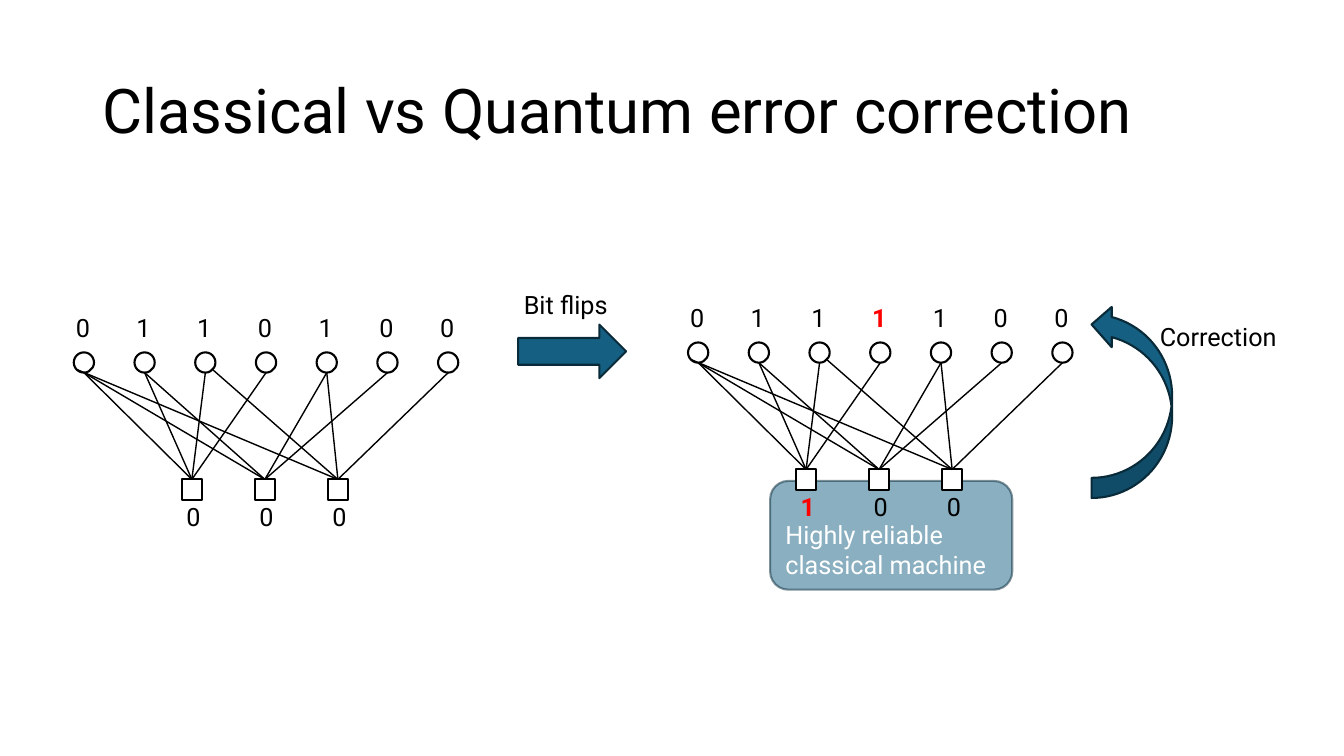
from lxml.etree import SubElement
from pptx import Presentation
from pptx.dml.color import RGBColor
from pptx.enum.shapes import MSO_CONNECTOR as Connector, MSO_SHAPE as Shape
from pptx.enum.text import MSO_ANCHOR as Anchor, PP_ALIGN as Align
from pptx.oxml.ns import qn
from pptx.util import Cm, Pt


def color(hex_code):
    return RGBColor.from_string(hex_code)


class CodeSlide:
    FONT = "Roboto"
    BLACK, WHITE, RED = "000000", "FFFFFF", "FF0000"
    TEAL, NAVY = "156082", "092A39"
    NODE, BIT_PITCH, CHECK_PITCH = 0.51, 1.53, 1.84
    PARITY = (
        ((0, 0), (1, 0), (2, 0), (3, 0)),
        ((0, 0), (1, 0), (4, 0), (5, 0)),
        ((0, -1), (2, 1), (4, 0), (6, 0)),
    )

    def __init__(self, slide):
        self.shapes = slide.shapes

    def set_words(self, frame, words, size=18, ink=BLACK, bold=False):
        frame.text = words
        paragraph = frame.paragraphs[0]
        paragraph.alignment = Align.LEFT
        font = paragraph.runs[0].font
        font.name, font.size, font.bold = self.FONT, Pt(size), bold
        font.color.rgb = color(ink)
        return paragraph

    def label(self, words, x, y, width, ink=BLACK, bold=False):
        frame = self.shapes.add_textbox(Cm(x), Cm(y), Cm(width), Cm(1.02)).text_frame
        frame.word_wrap = False
        self.set_words(frame, words, ink=ink, bold=bold)

    def title(self, words):
        frame = self.shapes.add_textbox(Cm(2.33), Cm(1.01), Cm(29.21), Cm(3.68)).text_frame
        frame.word_wrap = True
        frame.vertical_anchor = Anchor.MIDDLE
        self.set_words(frame, words, size=44).line_spacing = 0.9

    def shape(self, kind, x, y, width, height, fill=TEAL, outline=NAVY):
        shape = self.shapes.add_shape(kind, Cm(x), Cm(y), Cm(width), Cm(height))
        shape.shadow.inherit = False
        shape.fill.solid()
        shape.fill.fore_color.rgb = color(fill)
        shape.line.color.rgb = color(outline)
        shape.line.width = Pt(1.5)
        return shape

    def node(self, kind, x, y):
        return self.shape(kind, x, y, self.NODE, self.NODE, self.WHITE, self.BLACK)

    def edge(self, check, x, y):
        line = self.shapes.add_connector(Connector.STRAIGHT, 0, 0, Cm(x), Cm(y))
        line.begin_connect(check, 0)
        line.line.color.rgb = color(self.BLACK)
        line.line.width = Pt(1)
        SubElement(line.element.spPr, qn("a:effectLst"))

    def machine(self, words, x, y, width, height):
        box = self.shape(Shape.ROUNDED_RECTANGLE, x, y, width, height)
        for tint in list(box.element.spPr.iter(qn("a:srgbClr"))):
            SubElement(tint, qn("a:alpha"), val="50000")
        box.text_frame.word_wrap = True
        box.text_frame.vertical_anchor = Anchor.BOTTOM
        self.set_words(box.text_frame, words, ink=self.WHITE)

    def digits(self, values, x, y, pitch, flipped):
        for i, value in enumerate(values):
            wrong = i == flipped
            self.label(value, x + i * pitch, y, 0.97, self.RED if wrong else self.BLACK, wrong)

    def tanner_graph(self, x, y, bits, syndrome, flipped_bit=None, flipped_check=None):
        for i in range(len(bits)):
            self.node(Shape.OVAL, x + i * self.BIT_PITCH, y)
        for i, neighbours in enumerate(self.PARITY):
            check = self.node(Shape.RECTANGLE, x + 2.72 + i * self.CHECK_PITCH, y + 3.2)
            for bit, side in neighbours:
                center = x + self.NODE / 2 + bit * self.BIT_PITCH
                self.edge(check, center + 0.18 * side, y + self.NODE - 0.08 * abs(side))
        self.digits(bits, x - 0.2, y - 1.14, self.BIT_PITCH, flipped_bit)
        self.digits(syndrome, x + 2.59, y + 3.63, self.CHECK_PITCH, flipped_check)


def main():
    deck = Presentation()
    deck.slide_width, deck.slide_height = Cm(33.87), Cm(19.05)
    page = CodeSlide(deck.slides.add_slide(deck.slide_layouts[6]))

    page.machine("Highly reliable classical machine", 19.41, 12.12, 6.1, 2.74)
    page.title("Classical vs Quantum error correction")
    page.tanner_graph(1.86, 8.88, "0110100", "000")
    page.tanner_graph(17.34, 8.63, "0111100", "100", flipped_bit=3, flipped_check=0)

    page.shape(Shape.RIGHT_ARROW, 13.06, 8.18, 2.72, 1.35)
    page.label("Bit flips", 12.95, 7.16, 2.95)

    correction = page.shape(Shape.CURVED_LEFT_ARROW, 27.51, 7.67, 2.03, 4.88)
    correction.element.spPr.xfrm.set("flipV", "1")
    page.label("Correction", 28.98, 7.98, 3.94)

    deck.save("out.pptx")


if __name__ == "__main__":
    main()
